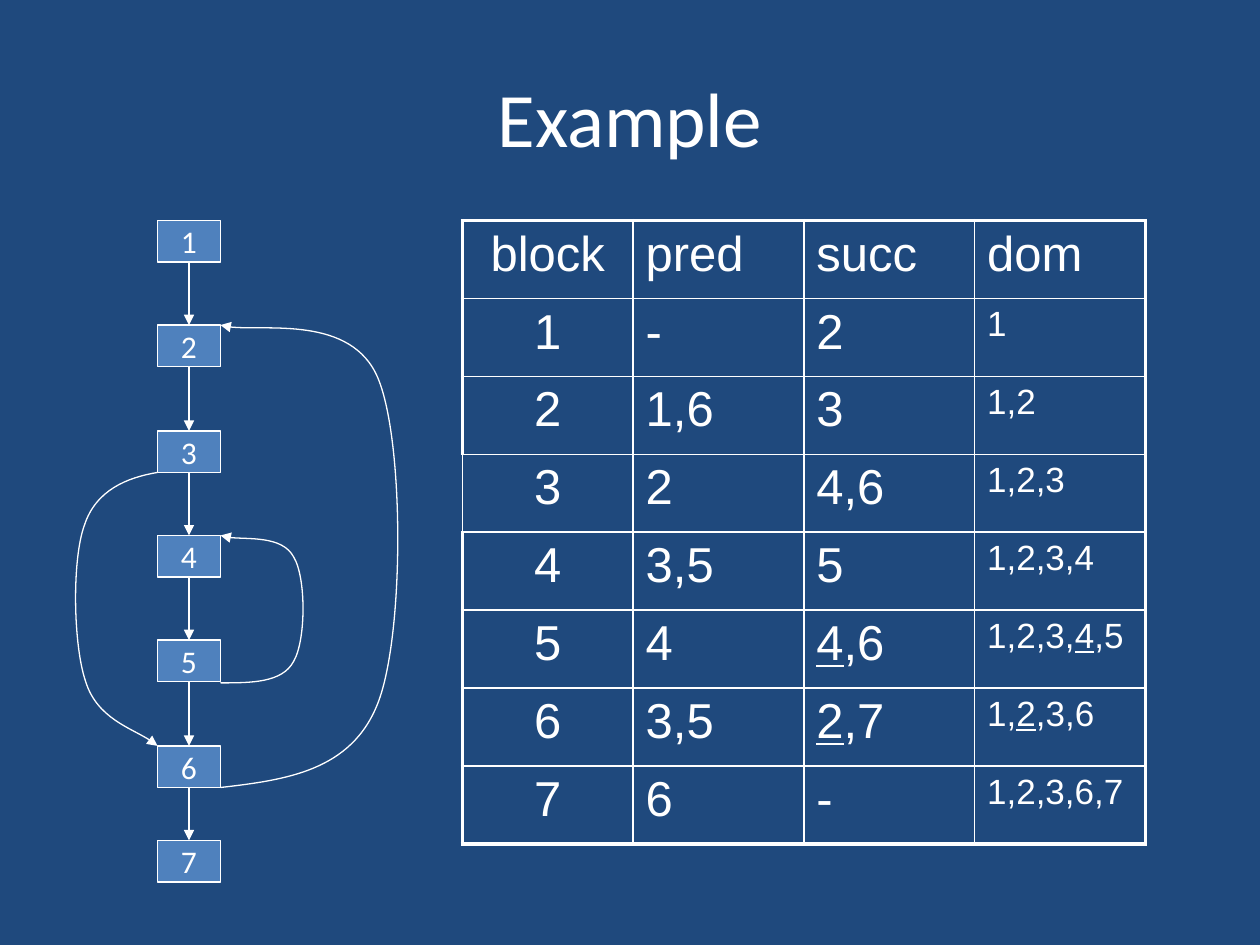
from lxml.etree import SubElement
from pptx import Presentation
from pptx.dml.color import RGBColor
from pptx.enum.shapes import MSO_CONNECTOR as Connector, MSO_SHAPE as Shape
from pptx.enum.text import MSO_ANCHOR as Anchor, PP_ALIGN as Align
from pptx.oxml.ns import qn
from pptx.util import Pt

EMU_PER_PX = 9144  # 100 px to the inch


class Theme:
    background = RGBColor(0x1F, 0x49, 0x7D)
    node = RGBColor(0x4F, 0x81, 0xBD)
    ink = RGBColor(0xFF, 0xFF, 0xFF)
    title = {"name": "Calibri", "size": Pt(44)}
    label = {"name": "Calibri", "size": Pt(18)}
    cell = {"name": "Arial", "size": Pt(28)}
    small_cell = {"name": "Arial", "size": Pt(20)}
    line, grid, frame = Pt(0.75), Pt(1), Pt(2.25)


NODE_LEFT, NODE_WIDTH, NODE_HEIGHT = 68, 50, 33
NODE_TOPS = [round(step * 250 / 3) for step in range(6)] + [492]

# Each jump is a start point followed by Bezier triples
JUMPS = [
    # 3 to 6
    [(68, 200), (44, 204), (19, 214), (10, 242), (0, 269), (1, 337), (11, 366),
     (20, 395), (56, 406), (68, 417)],
    # 5 to 4
    [(118, 367), (142, 367), (167, 367), (176, 350), (186, 333), (186, 283),
     (176, 267), (167, 250), (125, 254), (118, 250)],
    # 6 to 2
    [(118, 450), (170, 444), (222, 437), (243, 383), (264, 329), (264, 175),
     (243, 125), (222, 75), (139, 90), (118, 83)],
]

# Text between underscores is underlined
ROWS = [
    ["block", "pred", "succ", "dom"],
    ["1", "-", "2", "1"],
    ["2", "1,6", "3", "1,2"],
    ["3", "2", "4,6", "1,2,3"],
    ["4", "3,5", "5", "1,2,3,4"],
    ["5", "4", "_4_,6", "1,2,3,_4_,5"],
    ["6", "3,5", "_2_,7", "1,_2_,3,6"],
    ["7", "6", "-", "1,2,3,6,7"],
]


def px(*lengths):
    return [length * EMU_PER_PX for length in lengths]


def write(paragraph, text, style, align):
    paragraph.alignment = align
    for index, part in enumerate(text.split("_")):
        if not part:
            continue
        run = paragraph.add_run()
        run.text = part
        for name, value in style.items():
            setattr(run.font, name, value)
        run.font.color.rgb = Theme.ink
        if index % 2:
            run.font.underline = True


def draw_line(shape, arrow=False):
    shape.line.color.rgb = Theme.ink
    shape.line.width = Theme.line
    if arrow:
        properties = shape._element.spPr
        SubElement(properties.find(qn("a:ln")), qn("a:tailEnd"), type="triangle")
        if properties.find(qn("a:effectLst")) is None:
            SubElement(properties, qn("a:effectLst"))


def add_title(slide, left, top, width, height):
    title = slide.shapes.title
    title.left, title.top, title.width, title.height = px(left, top, width, height)
    title.text_frame.vertical_anchor = Anchor.MIDDLE
    write(title.text_frame.paragraphs[0], "Example", Theme.title, Align.CENTER)


def add_node(slide, left, top, label):
    node = slide.shapes.add_shape(
        Shape.RECTANGLE, *px(left, top, NODE_WIDTH, NODE_HEIGHT))
    node.shadow.inherit = False
    node.fill.solid()
    node.fill.fore_color.rgb = Theme.node
    draw_line(node)
    node.text_frame.word_wrap = False
    node.text_frame.vertical_anchor = Anchor.MIDDLE
    write(node.text_frame.paragraphs[0], label, Theme.label, Align.CENTER)


def add_jump(slide, left, top, points):
    start, *rest = [(left + x, top + y) for x, y in points]
    builder = slide.shapes.build_freeform(*start, scale=EMU_PER_PX)
    builder.add_line_segments(rest, close=False)
    jump = builder.convert_to_shape()
    # Turn every three line segments into one Bezier curve
    outline = next(jump._element.iter(qn("a:path")))
    segments = outline.findall(qn("a:lnTo"))
    for first in range(0, len(segments), 3):
        curve = SubElement(outline, qn("a:cubicBezTo"))
        for segment in segments[first:first + 3]:
            curve.append(segment[0])
            outline.remove(segment)
    jump.shadow.inherit = False
    jump.fill.background()
    draw_line(jump, arrow=True)


def add_flow_graph(slide, left, top):
    for number, node_top in enumerate(NODE_TOPS, 1):
        add_node(slide, left + NODE_LEFT, top + node_top, str(number))
    # Straight arrows between neighbours
    middle = left + NODE_LEFT + NODE_WIDTH // 2
    for upper, lower in zip(NODE_TOPS, NODE_TOPS[1:]):
        arrow = slide.shapes.add_connector(
            Connector.STRAIGHT,
            *px(middle, top + upper + NODE_HEIGHT, middle, top + lower))
        draw_line(arrow, arrow=True)
    for points in JUMPS:
        add_jump(slide, left, top, points)


def add_borders(cell, widths):
    for side, width in widths.items():
        border = SubElement(cell._tc.get_or_add_tcPr(), qn(f"a:ln{side}"), w=str(width))
        fill = SubElement(border, qn("a:solidFill"))
        SubElement(fill, qn("a:srgbClr"), val=str(Theme.ink))


def add_block_table(slide, left, top, width, height):
    last_row, last_column = len(ROWS) - 1, len(ROWS[0]) - 1
    table = slide.shapes.add_table(
        len(ROWS), len(ROWS[0]), *px(left, top, width, height)).table
    table.first_row = table.horz_banding = False
    for row, texts in enumerate(ROWS):
        for column, text in enumerate(texts):
            cell = table.cell(row, column)
            # Heavy outer frame, which is thin beside block 3
            heavy = {"L": column == 0 and row != 3, "R": column == last_column,
                     "T": row == 0, "B": row == last_row}
            add_borders(cell, {side: Theme.frame if outer else Theme.grid
                               for side, outer in heavy.items()})
            cell.fill.background()
            small = row > 0 and column == last_column
            paragraph = cell.text_frame.paragraphs[0]
            write(paragraph, text, Theme.small_cell if small else Theme.cell,
                  Align.LEFT if column else Align.CENTER)
            spacing = SubElement(paragraph._p.get_or_add_pPr(), qn("a:spcBef"))
            SubElement(spacing, qn("a:spcPct"), val="20000")


def main():
    presentation = Presentation()
    presentation.slide_width, presentation.slide_height = px(1000, 750)
    slide = presentation.slides.add_slide(presentation.slide_layouts[5])
    slide.background.fill.solid()
    slide.background.fill.fore_color.rgb = Theme.background
    add_title(slide, 50, 30, 900, 125)
    add_flow_graph(slide, 57, 175)
    add_block_table(slide, 367, 175, 542, 495)
    presentation.save("out.pptx")


if __name__ == "__main__":
    main()
